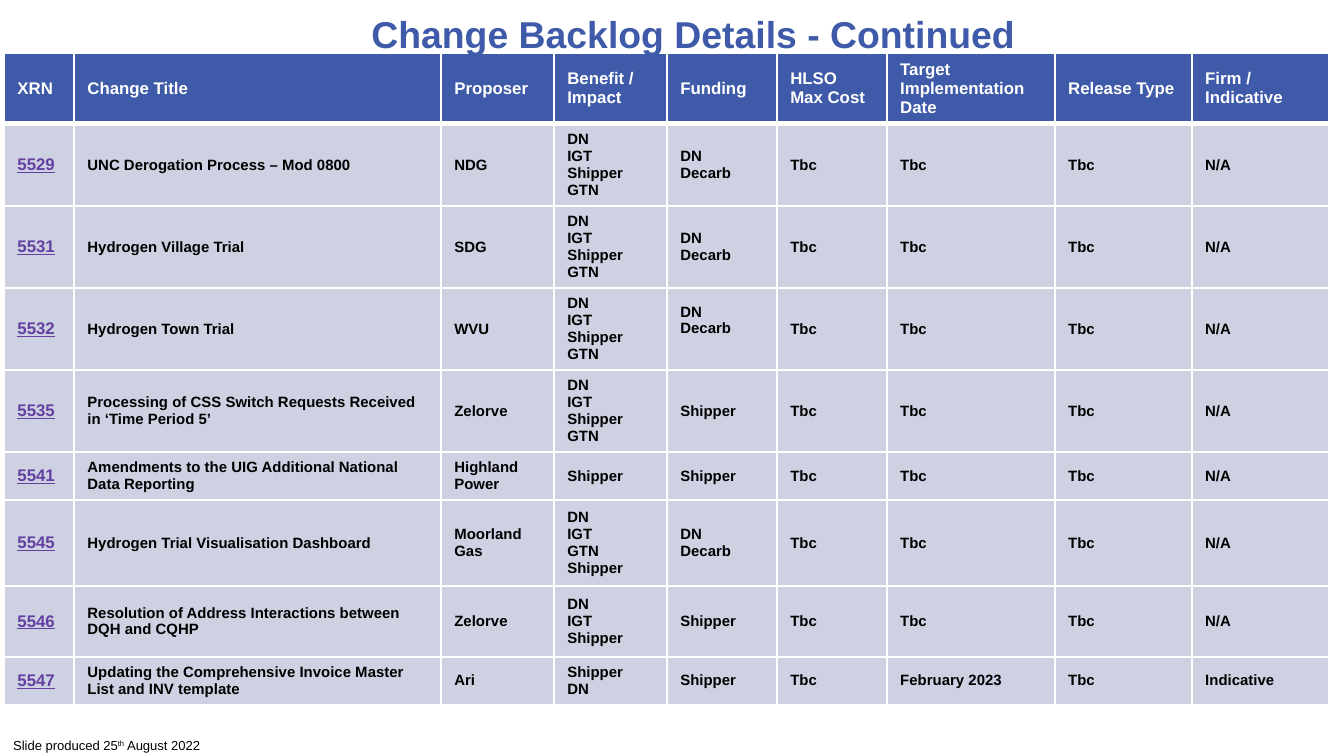
import pptx
import pptx.dml.color
import pptx.enum.text
import pptx.oxml
import pptx.oxml.ns
import pptx.util

RGBColor = pptx.dml.color.RGBColor
PP_ALIGN = pptx.enum.text.PP_ALIGN
MSO_ANCHOR = pptx.enum.text.MSO_ANCHOR

BLUE = RGBColor(0x3E, 0x5A, 0xA8)
PALE = RGBColor(0xCE, 0xD1, 0xE1)
PURPLE = RGBColor(0x64, 0x40, 0xA3)
WHITE = RGBColor(0xFF, 0xFF, 0xFF)
BLACK = RGBColor(0x00, 0x00, 0x00)
FONT = "Arial"
EMU_PER_PX = 914400 / 134.4

TITLE = "Change Backlog Details - Continued"
FOOTER = [("Slide produced 25", False), ("th", True), (" August 2022", False)]
HEADER = ["XRN", "Change Title", "Proposer", "Benefit / Impact", "Funding",
          "HLSO\nMax Cost", "Target Implementation Date", "Release Type",
          "Firm / Indicative"]
ALL_PARTIES = "DN\nIGT\nShipper\nGTN"
DECARB = "DN\nDecarb"
# XRN, title, proposer, impact, funding, target date, firmness
CHANGES = [
    ("5529", "UNC Derogation Process – Mod 0800", "NDG",
     ALL_PARTIES, DECARB, "Tbc", "N/A"),
    ("5531", "Hydrogen Village Trial", "SDG",
     ALL_PARTIES, DECARB, "Tbc", "N/A"),
    ("5532", "Hydrogen Town Trial", "WVU",
     ALL_PARTIES, DECARB, "Tbc", "N/A"),
    ("5535", "Processing of CSS Switch Requests Received in ‘Time Period 5’",
     "Zelorve", ALL_PARTIES, "Shipper", "Tbc", "N/A"),
    ("5541", "Amendments to the UIG Additional National Data Reporting",
     "Highland Power", "Shipper", "Shipper", "Tbc", "N/A"),
    ("5545", "Hydrogen Trial Visualisation Dashboard", "Moorland Gas",
     "DN\nIGT\nGTN\nShipper", DECARB, "Tbc", "N/A"),
    ("5546", "Resolution of Address Interactions between DQH and CQHP",
     "Zelorve", "DN\nIGT\nShipper", "Shipper", "Tbc", "N/A"),
    ("5547", "Updating the Comprehensive Invoice Master List and INV template",
     "Ari", "Shipper\nDN", "Shipper", "February 2023", "Indicative"),
]
COL_WIDTHS = [70, 367, 113, 113, 110, 110, 168, 137, 137]
ROW_HEIGHTS = [71, 82, 82, 82, 82, 48, 86, 71, 48]
TABLE_LEFT, TABLE_TOP = 4, 53
RAISED_CELL = (3, 4)  # its text sits above the middle of the row


def px(n):
    return pptx.util.Emu(round(n * EMU_PER_PX))


def style(tf, size, color, bold=False, underline=False):
    for p in tf.paragraphs:
        for r in p.runs:
            r.font.name = FONT
            r.font.size = pptx.util.Pt(size)
            r.font.bold = bold
            r.font.underline = underline
            r.font.color.rgb = color


def set_borders(cell, row):
    """White 1 pt lines, with a 3 pt rule between the header and the body."""
    weights = {"L": 1, "R": 1, "T": 3 if row == 1 else 1, "B": 3 if row == 0 else 1}
    tcPr = cell._tc.get_or_add_tcPr()
    for side, weight in weights.items():
        tcPr.append(pptx.oxml.parse_xml(
            f'<a:ln{side} {pptx.oxml.ns.nsdecls("a")} w="{pptx.util.Pt(weight)}">'
            f'<a:solidFill><a:srgbClr val="{WHITE}"/></a:solidFill></a:ln{side}>'))


def add_backlog(s):
    rows = [HEADER]
    for xrn, title, proposer, impact, funding, date, firm in CHANGES:
        rows.append([xrn, title, proposer, impact, funding, "Tbc", date, "Tbc", firm])
    table = s.shapes.add_table(
        len(rows), len(HEADER), px(TABLE_LEFT), px(TABLE_TOP),
        px(sum(COL_WIDTHS)), px(sum(ROW_HEIGHTS))).table
    for col, width in zip(table.columns, COL_WIDTHS):
        col.width = px(width)
    for row, height in zip(table.rows, ROW_HEIGHTS):
        row.height = px(height)
    for i, texts in enumerate(rows):
        for j, text in enumerate(texts):
            cell = table.cell(i, j)
            cell.text_frame.text = text
            cell.vertical_anchor = MSO_ANCHOR.MIDDLE
            if (i, j) == RAISED_CELL:
                cell.margin_bottom = px(24)
            set_borders(cell, i)
            cell.fill.solid()
            cell.fill.fore_color.rgb = PALE if i else BLUE
            if i == 0:
                style(cell.text_frame, 9, WHITE, bold=True)
            elif j == 0:
                style(cell.text_frame, 9, PURPLE, bold=True, underline=True)
            else:
                style(cell.text_frame, 8, BLACK, bold=True)


def add_title(s):
    tf = s.shapes.add_textbox(px(89), px(6), px(1209), px(55)).text_frame
    tf.word_wrap = True
    tf.vertical_anchor = MSO_ANCHOR.MIDDLE
    tf.text = TITLE
    tf.paragraphs[0].alignment = PP_ALIGN.CENTER
    style(tf, 20, BLUE, bold=True)


def add_footer(s):
    tf = s.shapes.add_textbox(px(0), px(731), px(218), px(30)).text_frame
    tf.word_wrap = False
    tf.auto_size = pptx.enum.text.MSO_AUTO_SIZE.SHAPE_TO_FIT_TEXT
    for text, raised in FOOTER:
        r = tf.paragraphs[0].add_run()
        r.text = text
        if raised:
            r._r.get_or_add_rPr().set("baseline", "30000")
    style(tf, 7, BLACK)


def main():
    prs = pptx.Presentation()
    prs.slide_width, prs.slide_height = px(1344), px(756)
    s = prs.slides.add_slide(prs.slide_layouts[6])
    add_backlog(s)
    add_title(s)
    add_footer(s)
    prs.save("out.pptx")


if __name__ == "__main__":
    main()
